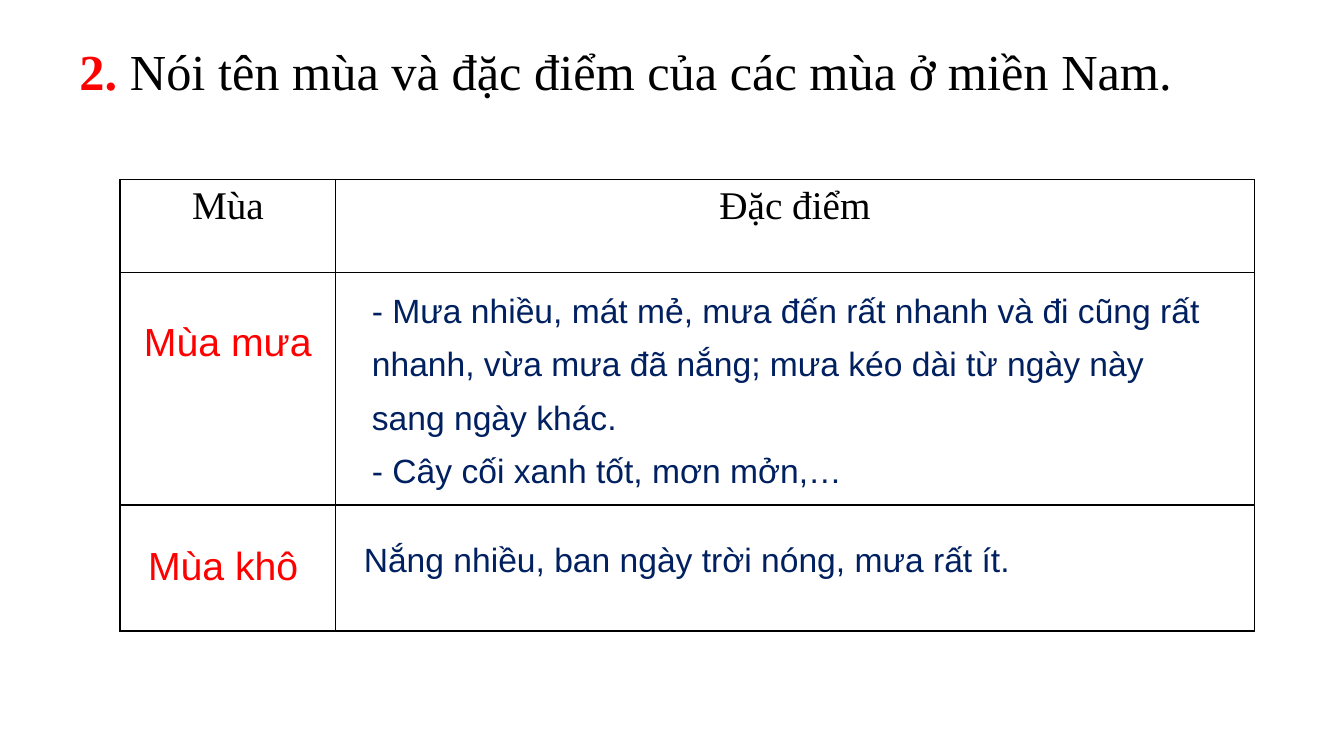
from lxml import etree
from pptx import Presentation
from pptx import util as u
from pptx.dml.color import RGBColor
from pptx.enum import text
from pptx.oxml import ns

PX = 9144
COLORS = {"ink": "000000", "paper": "FFFFFF", "season": "FF0000", "trait": "002060"}
SERIF, SANS = "Times New Roman", "Arial"
COLUMNS = [214, 911]
ROWS = [92, 231, 125]
HEADINGS = ["Mùa", "Đặc điểm"]
SEASONS = [
    ("Mùa mưa", (14, 132, 207, 57)),
    ("Mùa khô", (18, 354, 207, 57)),
]
TRAITS = [
    (["- Mưa nhiều, mát mẻ, mưa đến rất nhanh và đi cũng rất nhanh, "
      "vừa mưa đã nắng; mưa kéo dài từ ngày này sang ngày khác.",
      "- Cây cối xanh tốt, mơn mởn,…"], (240, 92, 861, 223), u.Pt(38)),
    (["Nắng nhiều, ban ngày trời nóng, mưa rất ít."], (232, 352, 870, 50), None),
]


def px(*lengths):
    """Turn px lengths into EMU."""
    return [u.Emu(length * PX) for length in lengths]


def style(span, font, size, color, bold=False):
    """Format one run."""
    span.font.name = font
    span.font.size = u.Pt(size)
    span.font.bold = bold
    span.font.color.rgb = RGBColor.from_string(COLORS[color])


def add_label(page, box, lines, size, color, spacing=None):
    """Place sans text in a box, one paragraph a line."""
    frame = page.shapes.add_textbox(*px(*box)).text_frame
    frame.word_wrap = True
    frame.text = "\n".join(lines)
    for para in frame.paragraphs:
        para.line_spacing = spacing
        style(para.runs[0], SANS, size, color)


def add_title(page, box):
    """Place the numbered question."""
    frame = page.shapes.add_textbox(*px(*box)).text_frame
    frame.word_wrap = True
    para = frame.paragraphs[0]
    para.alignment = text.PP_ALIGN.JUSTIFY
    for words, color, bold in [
        ("2. ", "season", True),
        ("Nói tên mùa và đặc điểm của các mùa ở miền Nam.", "ink", False),
    ]:
        span = para.add_run()
        span.text = words
        style(span, SERIF, 36, color, bold)


def outline(cell):
    """Draw a thin line on all four sides of a cell, then fill it."""
    props = cell._tc.get_or_add_tcPr()
    for side in ("a:lnL", "a:lnR", "a:lnT", "a:lnB"):
        line = etree.SubElement(props, ns.qn(side), w=str(u.Pt(1)))
        fill = etree.SubElement(line, ns.qn("a:solidFill"))
        etree.SubElement(fill, ns.qn("a:srgbClr"), val=COLORS["ink"])
    cell.fill.solid()
    cell.fill.fore_color.rgb = RGBColor.from_string(COLORS["paper"])


def add_grid(page, box):
    """Place the ruled table with its headings."""
    grid = page.shapes.add_table(len(ROWS), len(COLUMNS), *px(*box)).table
    grid.first_row = grid.horz_banding = False
    for column, width in zip(grid.columns, px(*COLUMNS)):
        column.width = width
    for row, height in zip(grid.rows, px(*ROWS)):
        row.height = height
    for cell in grid.iter_cells():
        outline(cell)
    for index, heading in enumerate(HEADINGS):
        cell = grid.cell(0, index)
        cell.text = heading
        para = cell.text_frame.paragraphs[0]
        para.alignment = text.PP_ALIGN.CENTER
        style(para.runs[0], SERIF, 28, "ink")


def add_seasons(page, box):
    """Place the table and the season texts over its cells."""
    left, top = box[:2]
    add_grid(page, box)
    for name, (x, y, width, height) in SEASONS:
        add_label(page, (left + x, top + y, width, height), [name], 28, "season")
    for lines, (x, y, width, height), spacing in TRAITS:
        add_label(page, (left + x, top + y, width, height), lines, 24, "trait", spacing)


def main():
    """Build and save the slide."""
    deck = Presentation()
    deck.slide_width, deck.slide_height = px(1333, 750)
    page = deck.slides.add_slide(deck.slide_layouts[6])
    add_seasons(page, (119, 178, sum(COLUMNS), sum(ROWS)))
    add_title(page, (69, 35, 1127, 71))
    deck.save("out.pptx")


if __name__ == "__main__":
    main()
